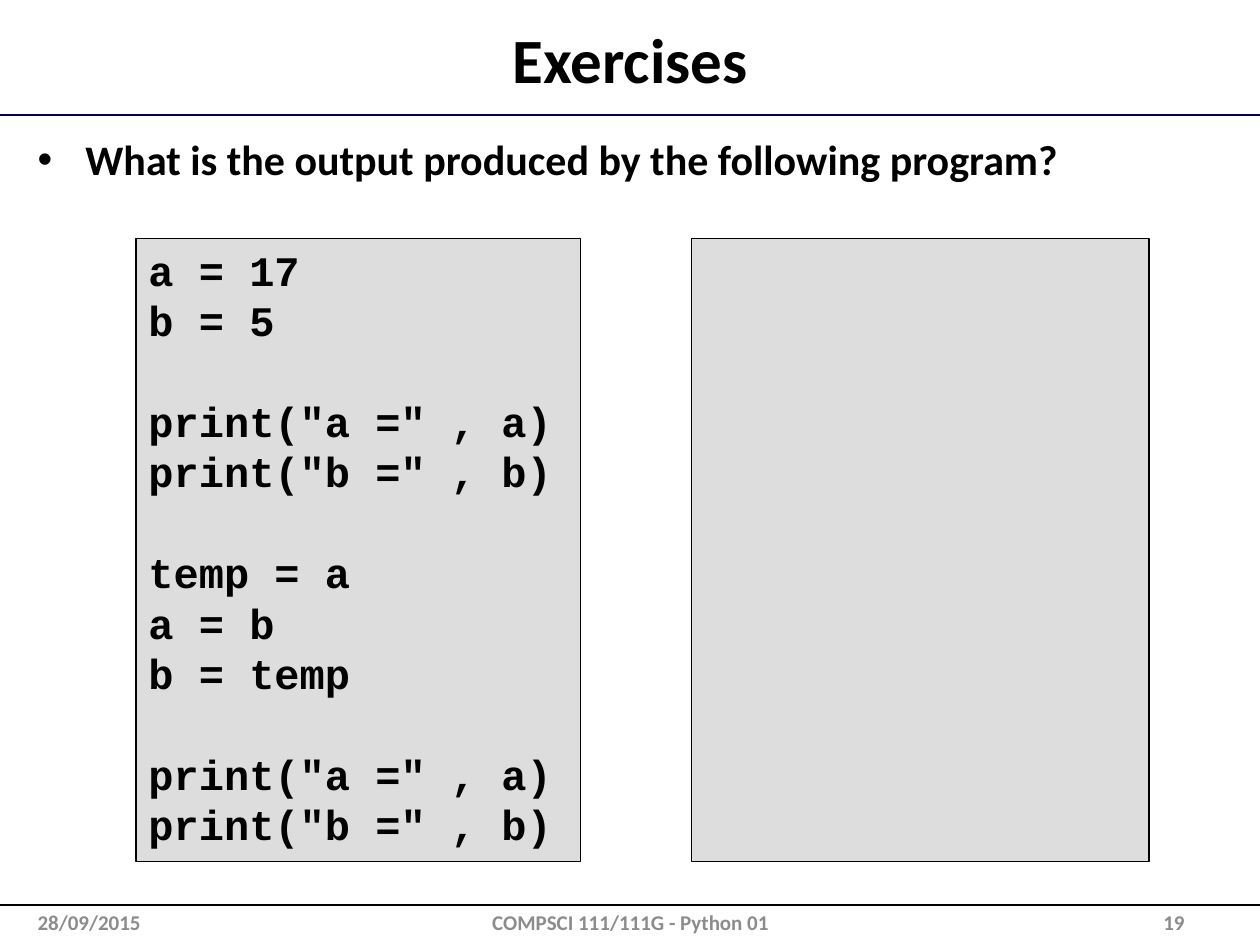
from pptx import Presentation
from pptx.dml.color import RGBColor
from pptx.enum.shapes import MSO_CONNECTOR as Conn, MSO_SHAPE as Shape
from pptx.enum.text import MSO_ANCHOR as Anchor, PP_ALIGN as Align
from pptx.oxml.ns import qn
from pptx.util import Inches, Pt
from lxml.etree import SubElement

COLORS = {"ink": "000000", "rule": "000066", "panel": "DDDDDD", "foot": "8C8C8C"}
CODE = [
    ["a = 17", "b = 5"],
    ['print("a =" , a)', 'print("b =" , b)'],
    ["temp = a", "a = b", "b = temp"],
    ['print("a =" , a)', 'print("b =" , b)'],
]
PITCH = Pt(28.8)


def color(name):
    return RGBColor.from_string(COLORS[name])


def style(frame, size, font="Calibri", ink="ink", align=Align.LEFT):
    for para in frame.paragraphs:
        para.alignment = align
        for run in para.runs:
            run.font.size = Pt(size)
            run.font.name = font
            run.font.bold = True
            run.font.color.rgb = color(ink)


def add_title(slide, text):
    title = slide.shapes.title
    title.left, title.top = Inches(0.1), Inches(0.12)
    title.width, title.height = Inches(9.8), Inches(0.69)
    title.text_frame.text = text
    title.text_frame.vertical_anchor = Anchor.MIDDLE
    style(title.text_frame, 36, align=Align.CENTER)


def add_rule(slide, top, ink):
    y = Inches(top)
    line = slide.shapes.add_connector(Conn.STRAIGHT, 0, y, Inches(10), y)
    line.line.color.rgb = color(ink)
    line.line.width = Pt(1)
    SubElement(line._element.spPr, qn("a:effectLst"))


def add_text(slide, text, left, top, width, height):
    box = slide.shapes.add_textbox(
        Inches(left), Inches(top), Inches(width), Inches(height))
    frame = box.text_frame
    frame.word_wrap = True
    frame.text = text
    return frame


def add_bullet(slide, text):
    frame = add_text(slide, text, 0.2, 1.01, 9.6, 0.6)
    style(frame, 24)
    para = frame.paragraphs[0]
    para.space_before = Pt(4.8)
    props = para._p.get_or_add_pPr()
    props.set("marL", str(Inches(0.38)))
    props.set("indent", str(-Inches(0.38)))
    SubElement(props, qn("a:buFont"), typeface="Arial")
    SubElement(props, qn("a:buChar"), char="•")


def add_panel(slide, left, width):
    panel = slide.shapes.add_shape(
        Shape.RECTANGLE, Inches(left), Inches(1.89), Inches(width), Inches(4.95))
    panel.shadow.inherit = False
    panel.fill.solid()
    panel.fill.fore_color.rgb = color("panel")
    panel.line.color.rgb = color("ink")
    panel.line.width = Pt(0.75)
    return panel.text_frame


def fill_code(frame, groups):
    """Write the code lines, with one line of space between groups."""
    frame.word_wrap = True
    frame.vertical_anchor = Anchor.TOP
    frame.text = "\n".join(line for group in groups for line in group)
    style(frame, 24, "Courier New")
    for para in frame.paragraphs:
        para.line_spacing = PITCH
    start = 0
    for group in groups[:-1]:
        start += len(group)
        frame.paragraphs[start].space_before = PITCH


def add_footer(slide):
    for text, left, width, align in (
        ("28/09/2015", 0.2, 2.33, Align.LEFT),
        ("COMPSCI 111/111G - Python 01", 3.42, 3.17, Align.CENTER),
        ("19", 7.17, 2.33, Align.RIGHT),
    ):
        frame = add_text(slide, text, left, 7.18, width, 0.27)
        frame.vertical_anchor = Anchor.MIDDLE
        style(frame, 12, ink="foot", align=align)


def main():
    deck = Presentation()
    deck.slide_width, deck.slide_height = Inches(10), Inches(7.5)
    slide = deck.slides.add_slide(deck.slide_layouts[5])
    add_rule(slide, 0.91, "rule")
    add_rule(slide, 7.18, "ink")
    add_title(slide, "Exercises")
    add_bullet(slide, "What is the output produced by the following program?")
    fill_code(add_panel(slide, 1.08, 3.53), CODE)
    add_panel(slide, 5.49, 3.63)
    add_footer(slide)
    deck.save("out.pptx")


if __name__ == "__main__":
    main()
